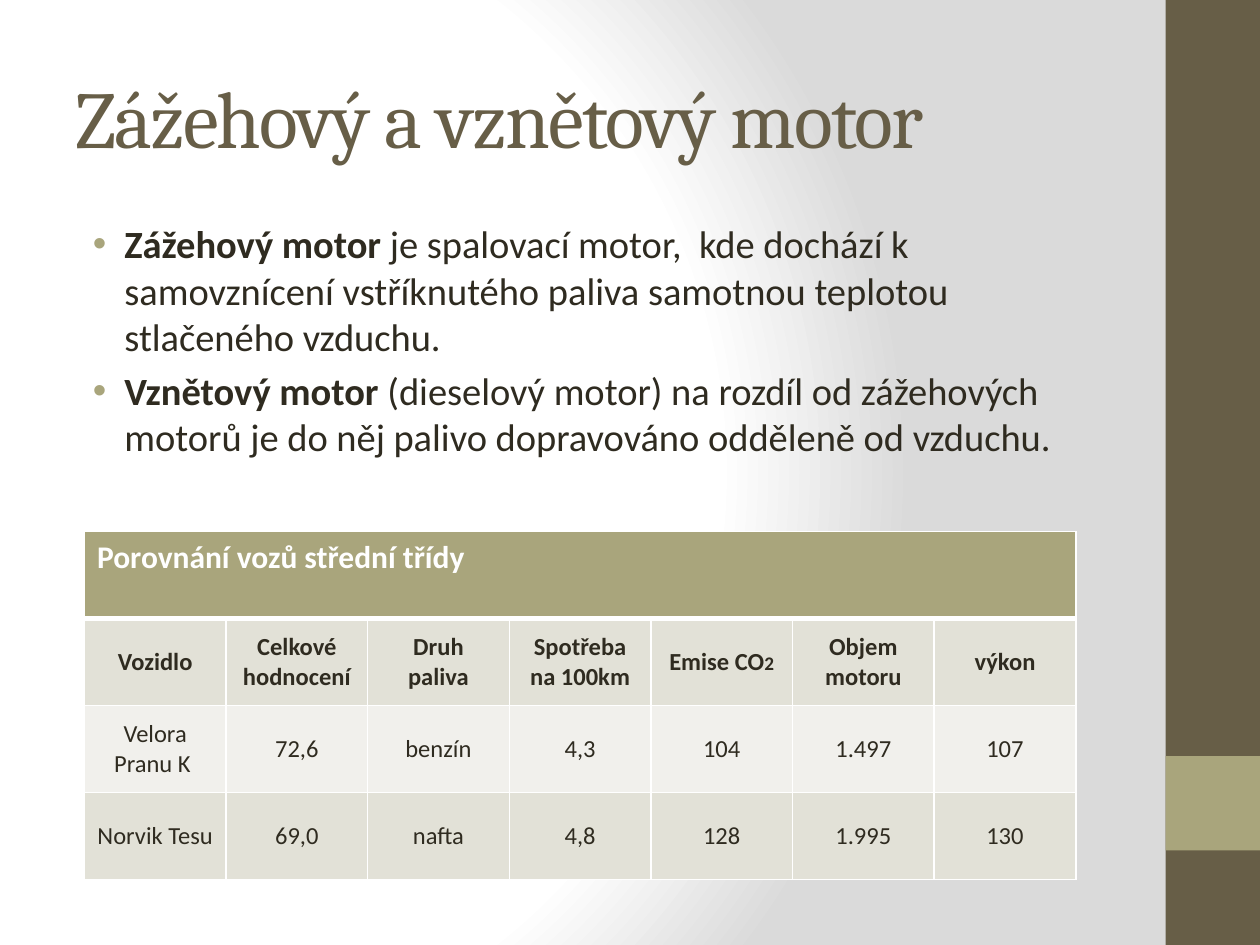
"""Build the slide comparing petrol and diesel engines."""
from dataclasses import dataclass

import pptx
import pptx.dml.color
import pptx.enum.shapes
import pptx.enum.text
import pptx.oxml
import pptx.oxml.ns
import pptx.util
from lxml import etree

qn = pptx.oxml.ns.qn
ANCHOR = pptx.enum.text.MSO_ANCHOR
ALIGN = pptx.enum.text.PP_ALIGN


@dataclass(frozen=True)
class Theme:
    brown: str = "675E47"
    olive: str = "A9A57C"
    ink: str = "2F2B20"
    white: str = "FFFFFF"
    mist: str = "DADADA"
    dark_band: str = "E2E1D7"
    light_band: str = "F1F0EC"
    heading: str = "Cambria"
    body: str = "Calibri"
    title_size: int = 46
    body_size: int = 22
    caption_size: int = 18
    cell_size: int = 14
    subscript_size: int = 11


class Deck:
    COLUMNS, ROWS = 40, 30

    def __init__(self, theme):
        self.theme = theme
        self.presentation = pptx.Presentation()
        self.presentation.slide_width = pptx.util.Inches(10)
        self.presentation.slide_height = pptx.util.Inches(7.5)
        self.slide = self.presentation.slides.add_slide(self.presentation.slide_layouts[6])

    def area(self, column, row, columns, rows):
        x = self.presentation.slide_width / self.COLUMNS
        y = self.presentation.slide_height / self.ROWS
        return [round(length) for length in (column * x, row * y, columns * x, rows * y)]

    def paint(self, fill, color):
        fill.solid()
        fill.fore_color.rgb = pptx.dml.color.RGBColor.from_string(color)

    def style(self, paragraph, size, color, font=None, bold=None):
        paragraph.font.name = font or self.theme.body
        paragraph.font.size = pptx.util.Pt(size)
        paragraph.font.bold = bold
        paragraph.font.color.rgb = pptx.dml.color.RGBColor.from_string(color)

    def background(self, stops):
        self.slide.background.fill.solid()
        properties = self.slide.element.find(".//" + qn("p:bgPr"))
        marks = "".join(f'<a:gs pos="{share * 1000}"><a:srgbClr val="{color}"/></a:gs>'
                        for share, color in stops)
        gradient = pptx.oxml.parse_xml(
            f'<a:gradFill {pptx.oxml.ns.nsdecls("a")} rotWithShape="1"><a:gsLst>{marks}</a:gsLst>'
            '<a:path path="circle"><a:fillToRect l="20000" t="50000" r="100000" b="50000"/>'
            '</a:path></a:gradFill>')
        properties.replace(properties.find(qn("a:solidFill")), gradient)

    def block(self, place, color):
        block = self.slide.shapes.add_shape(
            pptx.enum.shapes.MSO_SHAPE.RECTANGLE, *self.area(*place))
        block.shadow.inherit = False
        self.paint(block.fill, color)
        block.line.fill.background()

    def text_frame(self, place, anchor):
        frame = self.slide.shapes.add_textbox(*self.area(*place)).text_frame
        frame.word_wrap = True
        frame.vertical_anchor = anchor
        return frame

    def title(self, place, words):
        paragraph = self.text_frame(place, ANCHOR.MIDDLE).paragraphs[0]
        self.style(paragraph, self.theme.title_size, self.theme.brown, self.theme.heading)
        heading = paragraph.add_run()
        heading.text = words
        heading.font._element.set("spc", "-100")

    def bullets(self, place, items):
        frame = self.text_frame(place, ANCHOR.TOP)
        for index, (term, meaning) in enumerate(items):
            paragraph = frame.add_paragraph() if index else frame.paragraphs[0]
            self.style(paragraph, self.theme.body_size, self.theme.ink)
            paragraph.space_before = pptx.util.Pt(self.theme.body_size * 0.2)
            lead = paragraph.add_run()
            lead.text, lead.font.bold = term, True
            paragraph.add_run().text = meaning
            properties = paragraph._p.get_or_add_pPr()
            properties.set("marL", str(pptx.util.Inches(0.38)))
            properties.set("indent", str(pptx.util.Inches(-0.25)))
            spacing = properties.find(qn("a:spcBef"))
            bullet_color = etree.Element(qn("a:buClr"))
            etree.SubElement(bullet_color, qn("a:srgbClr"), val=self.theme.olive)
            spacing.addnext(bullet_color)
            bullet_font = etree.Element(qn("a:buFont"), typeface="Arial")
            bullet_color.addnext(bullet_font)
            bullet_font.addnext(etree.Element(qn("a:buChar"), char="•"))

    def borders(self, cell, bottom=1):
        properties = cell._tc.get_or_add_tcPr()
        for index, (side, width) in enumerate((("L", 1), ("R", 1), ("T", 1), ("B", bottom))):
            line = etree.Element(qn(f"a:ln{side}"), w=str(pptx.util.Pt(width)))
            solid = etree.SubElement(line, qn("a:solidFill"))
            etree.SubElement(solid, qn("a:srgbClr"), val=self.theme.white)
            properties.insert(index, line)

    def table(self, place, caption, rows):
        width = len(rows[0])
        table = self.slide.shapes.add_table(len(rows) + 1, width, *self.area(*place)).table
        table.horz_banding = False
        for cell in table.rows[0].cells:
            self.paint(cell.fill, self.theme.olive)
            self.borders(cell, bottom=3)
        banner = table.cell(0, 0)
        banner.merge(table.cell(0, width - 1))
        banner.text = caption
        self.style(banner.text_frame.paragraphs[0], self.theme.caption_size,
                   self.theme.white, bold=True)
        for number, values in enumerate(rows, 1):
            band = self.theme.dark_band if number % 2 else self.theme.light_band
            for column, value in enumerate(values):
                cell = table.cell(number, column)
                cell.vertical_anchor = ANCHOR.MIDDLE
                self.paint(cell.fill, band)
                self.borders(cell)
                paragraph = cell.text_frame.paragraphs[0]
                paragraph.alignment = ALIGN.CENTER
                self.style(paragraph, self.theme.cell_size, self.theme.ink, bold=number == 1)
                label, _, subscript = value.partition("|")
                paragraph.add_run().text = label
                if subscript:
                    small = paragraph.add_run()
                    small.text = subscript
                    small.font.size = pptx.util.Pt(self.theme.subscript_size)


def main():
    theme = Theme()
    deck = Deck(theme)
    deck.background([(0, theme.white), (75, theme.white), (100, theme.mist)])
    deck.block((37, 0, 3, 30), theme.brown)
    deck.block((37, 24, 3, 3), theme.olive)
    deck.title((2, 1.2, 33.32, 5), "Zážehový a vznětový motor")
    deck.bullets((2.04, 6.8, 33.32, 21), [
        ("Zážehový motor", " je spalovací motor,  kde dochází k samovznícení vstříknutého "
                           "paliva samotnou teplotou stlačeného vzduchu."),
        ("Vznětový motor ", "(dieselový motor) na rozdíl od zážehových motorů je do něj "
                            "palivo dopravováno odděleně od vzduchu."),
    ])
    deck.table((2.68, 16.88, 31.48, 11.04), "Porovnání vozů střední třídy", [
        ["Vozidlo", "Celkové hodnocení", "Druh paliva", "Spotřeba na 100km", "Emise CO|2",
         "Objem motoru", "výkon"],
        ["Velora Pranu K ", "72,6", "benzín", "4,3", "104", "1.497", "107"],
        ["Norvik Tesu ", "69,0", "nafta", "4,8", "128", "1.995", "130"],
    ])
    deck.presentation.save("out.pptx")


if __name__ == "__main__":
    main()
